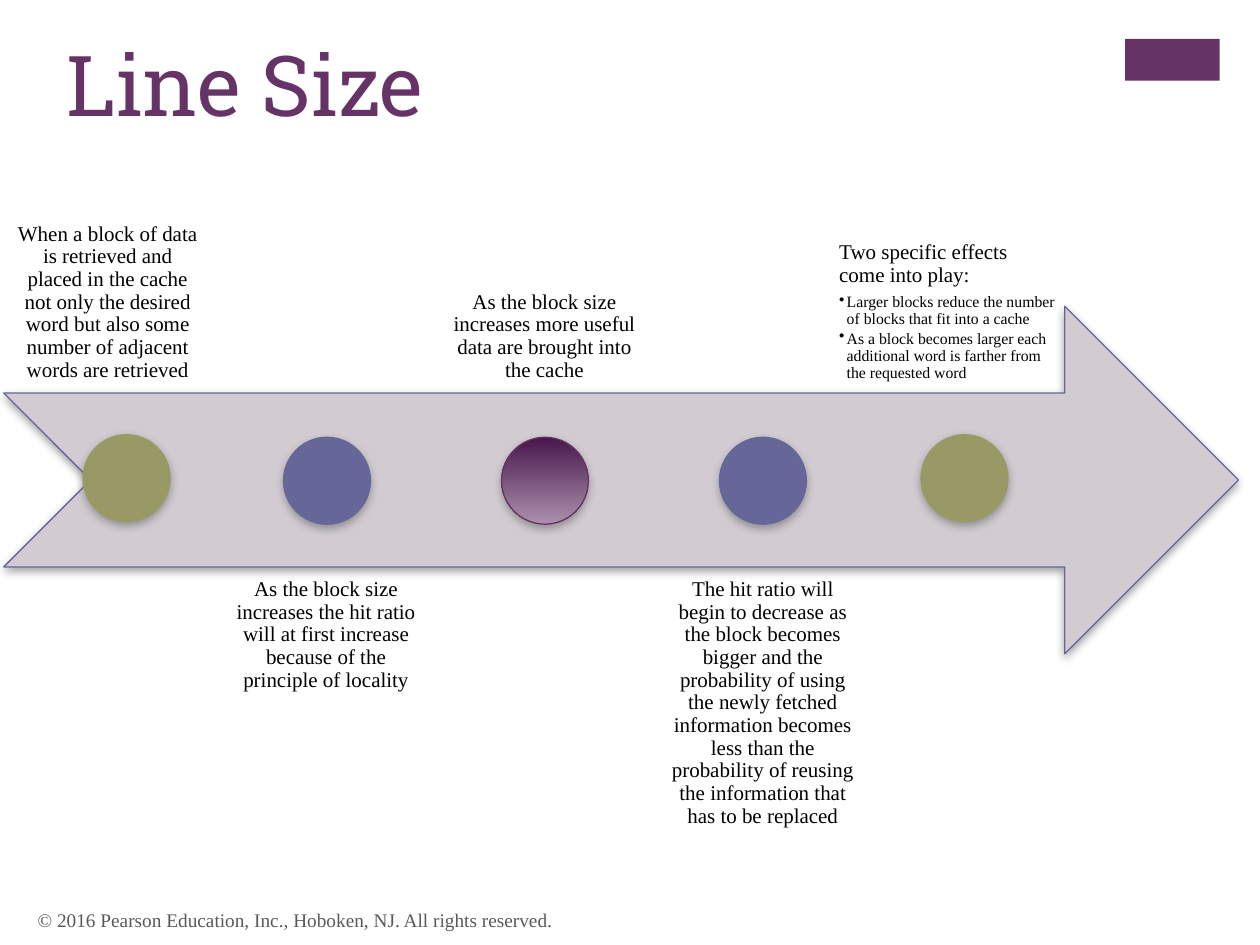
from dataclasses import dataclass

from lxml.etree import SubElement
from pptx import Presentation
from pptx.dml.color import RGBColor
from pptx.enum.shapes import MSO_SHAPE
from pptx.enum.text import MSO_ANCHOR, PP_ALIGN
from pptx.oxml.ns import qn
from pptx.util import Inches, Pt


@dataclass(frozen=True)
class Theme:
    plum: str = "663366"
    olive: str = "999966"
    slate: str = "666699"
    arrow: str = "D2CCD2"
    dark_plum: str = "47174B"
    pale_plum: str = "AC90AE"
    ink: str = "000000"
    footer_ink: str = "595959"
    shadow: str = "808080"
    title_font: str = "Roboto Slab"
    body_font: str = "Times New Roman"
    title_size: int = 48
    body_size: int = 12
    bullet_size: int = 9
    footer_size: int = 11


class SlideBuilder:
    def __init__(self, page, theme):
        self.page = page
        self.theme = theme

    def shape(self, kind, left, top, width, height, fill, line=None, shadow=False):
        shape = self.page.shapes.add_shape(
            kind, Inches(left), Inches(top), Inches(width), Inches(height))
        shape.shadow.inherit = False
        if isinstance(fill, tuple):
            shape.fill.gradient()
            shape.fill.gradient_angle = 270
            for stop, position, color in zip(shape.fill.gradient_stops, (0, 1), fill):
                stop.position = position
                stop.color.rgb = RGBColor.from_string(color)
        else:
            shape.fill.solid()
            shape.fill.fore_color.rgb = RGBColor.from_string(fill)
        if line:
            shape.line.color.rgb = RGBColor.from_string(line)
            shape.line.width = Pt(0.75)
        else:
            shape.line.fill.background()
        if shadow:
            self.cast_shadow(shape)
        return shape

    def cast_shadow(self, shape):
        effects = shape._element.spPr.find(qn("a:effectLst"))
        outer = SubElement(effects, qn("a:outerShdw"), blurRad=str(Pt(5)),
                           dist=str(Pt(2)), dir="5400000", rotWithShape="0")
        color = SubElement(outer, qn("a:srgbClr"), val=self.theme.shadow)
        SubElement(color, qn("a:alpha"), val="75000")

    def text(self, text, left, top, width, height, size, color, font=None,
             anchor=MSO_ANCHOR.TOP, inset=(0.1, 0.05)):
        box = self.page.shapes.add_textbox(
            Inches(left), Inches(top), Inches(width), Inches(height))
        frame = box.text_frame
        frame.word_wrap = True
        frame.vertical_anchor = anchor
        frame.margin_left = frame.margin_right = Inches(inset[0])
        frame.margin_top = frame.margin_bottom = Inches(inset[1])
        frame.text = text
        self.format(frame.paragraphs[0], size, color, font)
        return frame

    def format(self, para, size, color, font=None):
        for span in para.runs:
            span.font.size = Pt(size)
            span.font.name = font or self.theme.body_font
            span.font.color.rgb = RGBColor.from_string(color)

    def caption(self, text, left, top, width, anchor, align=PP_ALIGN.CENTER):
        frame = self.text(text, left, top, width, 2.76, self.theme.body_size,
                          self.theme.ink, anchor=anchor, inset=(0.09, 0.09))
        frame.paragraphs[0].alignment = align
        frame.paragraphs[0].line_spacing = 0.9
        return frame

    def bullet(self, frame, text, space_before):
        para = frame.add_paragraph()
        para.text = text
        para.level = 1
        properties = para._p.get_or_add_pPr()
        properties.set("marL", str(Inches(0.06)))
        properties.set("indent", str(Inches(-0.06)))
        color = SubElement(properties, qn("a:buClr"))
        SubElement(color, qn("a:srgbClr"), val=self.theme.ink)
        SubElement(properties, qn("a:buChar"), char="•")
        para.line_spacing = 0.9
        para.space_before = Pt(space_before)
        self.format(para, self.theme.bullet_size, self.theme.ink)

    def dot(self, left, top, fill, line):
        self.shape(MSO_SHAPE.OVAL, left, top, 0.69, 0.69, fill, line, shadow=True)


def main():
    deck = Presentation()
    deck.slide_width, deck.slide_height = Inches(10), Inches(7.5)
    theme = Theme()
    builder = SlideBuilder(deck.slides.add_slide(deck.slide_layouts[6]), theme)

    builder.shape(MSO_SHAPE.RECTANGLE, 8.93, 0.31, 0.75, 0.33, theme.plum)
    builder.text("Line Size", 0.43, 0.21, 8.26, 1.22, theme.title_size,
                 theme.plum, theme.title_font)
    builder.shape(MSO_SHAPE.NOTCHED_RIGHT_ARROW, 0.03, 2.43, 9.8, 2.76,
                  theme.arrow, theme.slate, shadow=True)

    above = (0.36, MSO_ANCHOR.BOTTOM)
    below = (4.5, MSO_ANCHOR.TOP)
    captions = [
        ("When a block of data is retrieved and placed in the cache not only the "
         "desired word but also some number of adjacent words are retrieved", above),
        ("As the block size increases the hit ratio will at first increase because "
         "of the principle of locality", below),
        ("As the block size increases more useful data are brought into the cache",
         above),
        ("The hit ratio will begin to decrease as the block becomes bigger and the "
         "probability of using the newly fetched information becomes less than the "
         "probability of reusing the information that has to be replaced", below),
    ]
    for column, (text, (top, anchor)) in enumerate(captions):
        builder.caption(text, 0.03 + 1.733 * column, top, 1.65, anchor)

    effects = builder.caption("Two specific effects come into play:", 6.57, above[0],
                              1.89, above[1], PP_ALIGN.LEFT)
    builder.bullet(effects, "Larger blocks reduce the number of blocks that fit "
                   "into a cache", 4.2)
    builder.bullet(effects, "As a block becomes larger each additional word is "
                   "farther from the requested word", 1.4)

    for left in (0.66, 7.31):
        builder.dot(left, 3.45, theme.olive, theme.olive)
    for left in (2.25, 5.71):
        builder.dot(left, 3.47, theme.slate, theme.slate)
    builder.dot(3.98, 3.47, (theme.dark_plum, theme.pale_plum), theme.plum)

    builder.text("© 2016 Pearson Education, Inc., Hoboken, NJ. All rights reserved.",
                 0.2, 7.1, 6.7, 0.4, theme.footer_size, theme.footer_ink,
                 anchor=MSO_ANCHOR.MIDDLE)
    deck.save("out.pptx")


if __name__ == "__main__":
    main()
